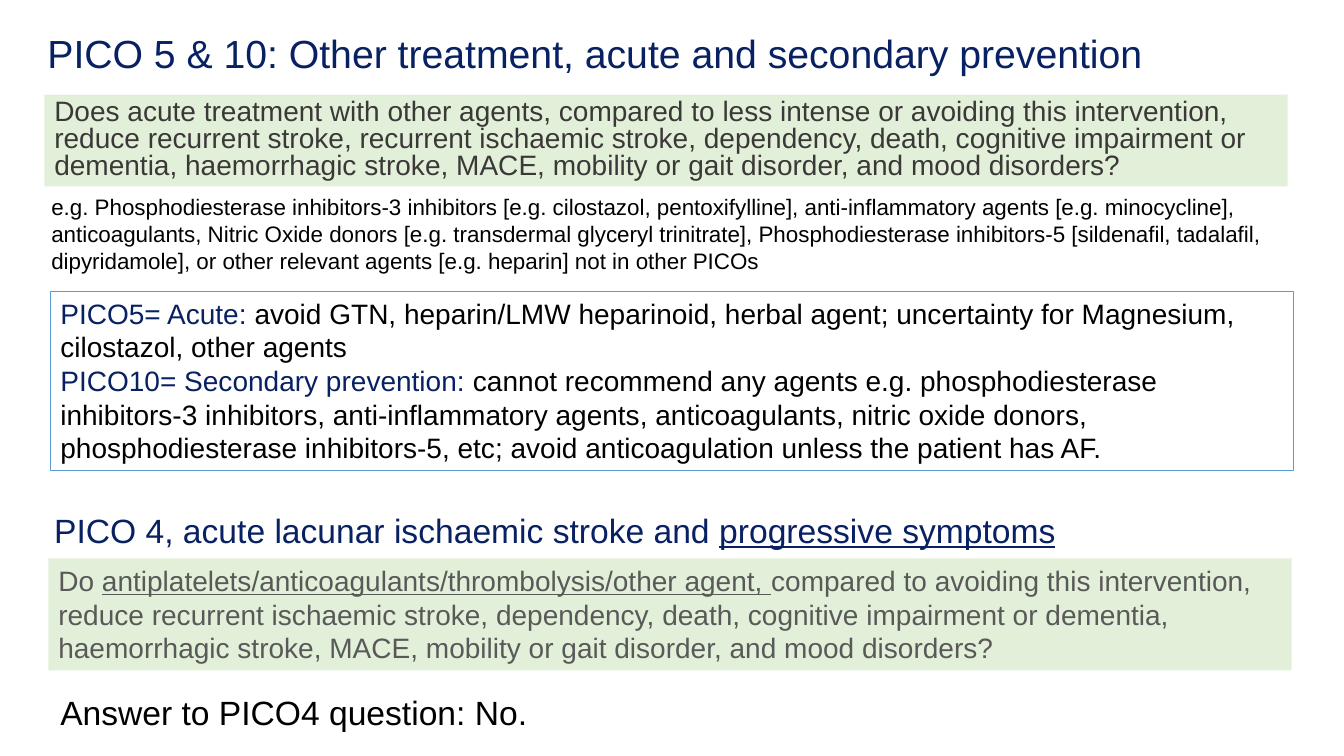
"""Build the slide on PICO 5, 10 and 4: other treatments and progressive symptoms."""
from dataclasses import dataclass

from pptx import Presentation
from pptx.dml.color import RGBColor as Color
from pptx.enum.shapes import MSO_SHAPE as Shape
from pptx.enum.text import MSO_ANCHOR as Anchor, MSO_AUTO_SIZE as Fit, PP_ALIGN as Align
from pptx.util import Inches, Pt


@dataclass(frozen=True)
class Theme:
    font: str = "Arial"
    navy: str = "082163"
    black: str = "000000"
    charcoal: str = "3B3838"
    grey: str = "595959"
    green: str = "E2F0D9"
    blue: str = "5B9BD5"
    title: int = 28
    heading: int = 24
    body: int = 20
    note: int = 16


theme = Theme()
deck = Presentation()
deck.slide_width, deck.slide_height = Inches(13.33), Inches(7.5)
page = deck.slides.add_slide(deck.slide_layouts[5])


def place(left, top, width, height):
    """Turn percentages of the slide into lengths."""
    across, down = deck.slide_width / 100, deck.slide_height / 100
    return [int(left * across), int(top * down), int(width * across), int(height * down)]


def write(box, *paragraphs, size, color=theme.black, spacing=1.0, after=0,
          anchor=Anchor.TOP, fit=Fit.SHAPE_TO_FIT_TEXT, wrap=True):
    """Write paragraphs of (text, span format) pairs into a box."""
    frame = box.text_frame
    frame.word_wrap, frame.auto_size, frame.vertical_anchor = wrap, fit, anchor
    for number, spans in enumerate(paragraphs):
        para = frame.add_paragraph() if number else frame.paragraphs[0]
        para.alignment, para.line_spacing = Align.LEFT, spacing
        para.space_before, para.space_after = Pt(0), Pt(after)
        for text, look in spans:
            span = para.add_run()
            span.text = text
            span.font.name, span.font.size = theme.font, Pt(size)
            span.font.color.rgb = Color.from_string(look.get("color", color))
            if look.get("underline"):
                span.font.underline = True


navy, underlined = {"color": theme.navy}, {"underline": True}
heading = {"color": theme.navy, "spacing": 0.9, "anchor": Anchor.MIDDLE, "fit": Fit.NONE}

title = page.shapes.title
title.left, title.top, title.width, title.height = place(2.78, 1.87, 92.35, 10.93)
write(title, [("PICO 5 & 10: Other treatment, acute and secondary prevention", {})],
      size=theme.title, **heading)

panels = [
    (place(3.3, 12.53, 92.5, 12.13), theme.green, None, [
        [("Does acute treatment with other agents, compared to less intense or avoiding this "
          "intervention, reduce recurrent stroke, recurrent ischaemic stroke, dependency, death, "
          "cognitive impairment or dementia, haemorrhagic stroke, MACE, mobility or gait disorder, "
          "and mood disorders?", {})],
    ], {"color": theme.charcoal, "spacing": 0.8}),
    (place(3.75, 38.53, 92.5, 23.73), None, theme.blue, [
        [("PICO5= Acute: ", navy),
         ("avoid GTN, heparin/LMW heparinoid, herbal agent; uncertainty for Magnesium, "
          "cilostazol, other agents", {})],
        [("PICO10= Secondary prevention: ", navy),
         ("cannot recommend any agents e.g. phosphodiesterase inhibitors-3 inhibitors, "
          "anti-inflammatory agents, anticoagulants, nitric oxide donors, phosphodiesterase "
          "inhibitors-5, etc; avoid anticoagulation unless the patient has AF.", {})],
    ], {}),
    (place(3.6, 73.87, 92.5, 14.8), theme.green, None, [
        [("Do ", {}),
         ("antiplatelets/anticoagulants/thrombolysis/other agent, ", underlined),
         ("compared to avoiding this intervention, reduce recurrent ischaemic stroke, dependency, "
          "death, cognitive impairment or dementia, haemorrhagic stroke, MACE, mobility or gait "
          "disorder, and mood disorders?", {})],
    ], {"color": theme.grey, "after": 2}),
]
for area, fill, line, paragraphs, look in panels:
    panel = page.shapes.add_shape(Shape.RECTANGLE, *area)
    panel.shadow.inherit = False
    if fill:
        panel.fill.solid()
        panel.fill.fore_color.rgb = Color.from_string(fill)
    else:
        panel.fill.background()
    if line:
        panel.line.color.rgb, panel.line.width = Color.from_string(line), Pt(0.75)
    else:
        panel.line.fill.background()
    write(panel, *paragraphs, size=theme.body, **look)

notes = [
    (place(3.3, 64.93, 93.32, 10.93), [
        ("PICO 4, acute lacunar ischaemic stroke and ", {}),
        ("progressive symptoms", underlined),
    ], {"size": theme.heading, **heading}),
    (place(3.75, 90.8, 36.6, 6.67), [
        ("Answer to PICO4 question: No.", {}),
    ], {"size": theme.heading, "wrap": False}),
    (place(3.08, 24.93, 93.1, 12.13), [
        ("e.g. Phosphodiesterase inhibitors-3 inhibitors [e.g. cilostazol, pentoxifylline], "
         "anti-inflammatory agents [e.g. minocycline], anticoagulants, Nitric Oxide donors "
         "[e.g. transdermal glyceryl trinitrate], Phosphodiesterase inhibitors-5 [sildenafil, "
         "tadalafil, dipyridamole], or other relevant agents [e.g. heparin] not in other PICOs", {}),
    ], {"size": theme.note}),
]
for area, spans, look in notes:
    write(page.shapes.add_textbox(*area), spans, **look)

deck.save("out.pptx")
